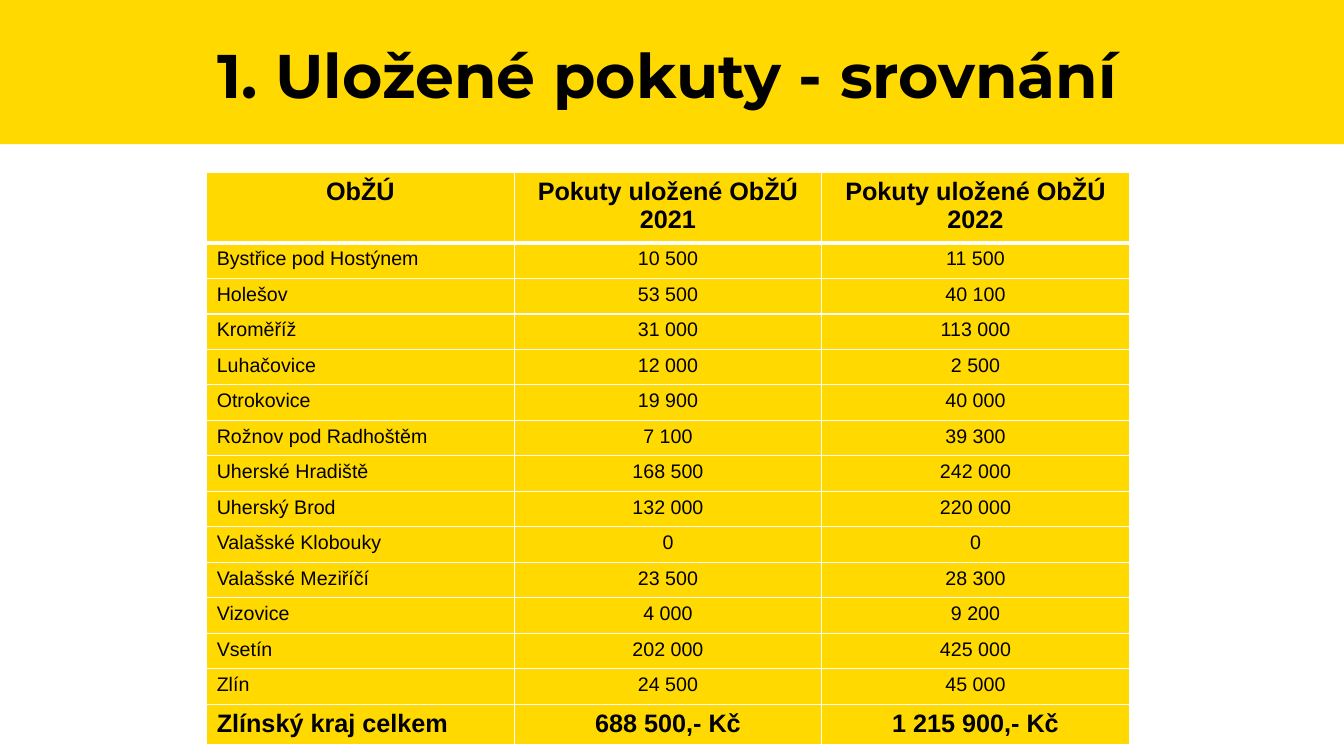
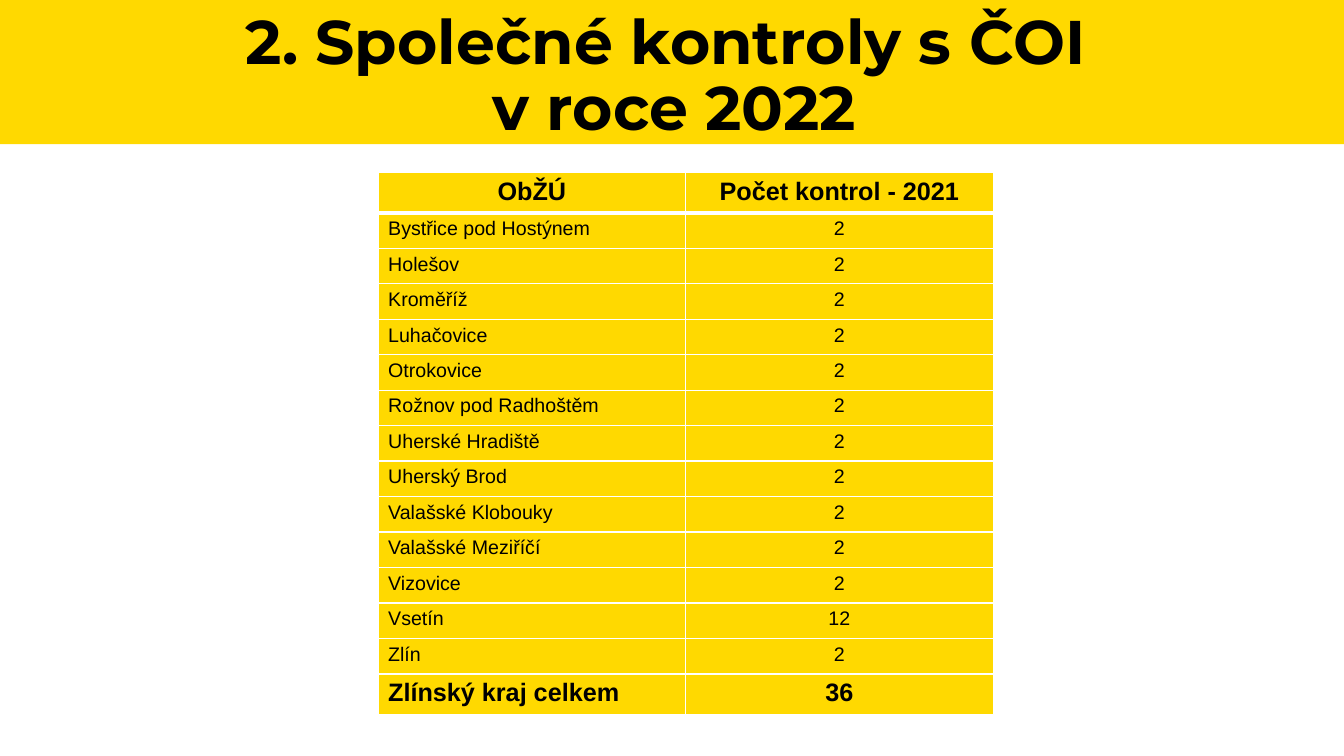
"""Build two slides comparing fines and inspections by trade office."""
import pptx
import pptx.dml.color
import pptx.enum.shapes
import pptx.enum.text
import pptx.oxml
import pptx.oxml.ns
import pptx.util

Inches = pptx.util.Inches
Pt = pptx.util.Pt
ALIGN = pptx.enum.text.PP_ALIGN

TOWNS = [
    "Bystřice pod Hostýnem", "Holešov", "Kroměříž", "Luhačovice", "Otrokovice",
    "Rožnov pod Radhoštěm", "Uherské Hradiště", "Uherský Brod",
    "Valašské Klobouky", "Valašské Meziříčí", "Vizovice", "Vsetín", "Zlín",
]
LABELS = ["ObŽÚ", *TOWNS, "Zlínský kraj celkem"]

SLIDES = [
    {
        "title": "1. Uložené pokuty - srovnání",
        "box": (0.46, 0.4, 12.32, 1.02),
        "left": 2.05,
        "head": 0.66,
        "data": [
            ["Pokuty uložené ObŽÚ 2021", "10 500", "53 500", "31 000", "12 000",
             "19 900", "7 100", "168 500", "132 000", "0", "23 500", "4 000",
             "202 000", "24 500", "688 500,- Kč"],
            ["Pokuty uložené ObŽÚ 2022", "11 500", "40 100", "113 000", "2 500",
             "40 000", "39 300", "242 000", "220 000", "0", "28 300", "9 200",
             "425 000", "45 000", "1 215 900,- Kč"],
        ],
    },
    {
        "title": "2. Společné kontroly s ČOI \vv roce 2022",
        "box": (0.26, 0.06, 12.86, 1.02),
        "left": 3.75,
        "head": 0.38,
        "data": [
            ["Počet kontrol - 2021", "2", "2", "2", "2", "2", "2", "2", "2",
             "2", "2", "2", "12", "2", "36"],
        ],
    },
]

COLORS = {"band": "FFD900", "text": "000000", "line": "FFFFFF"}
WIDE, HIGH = 13.33, 7.5
BAND = 1.43
TOP, COL, BODY, FOOT = 1.71, 3.05, 4.58, 0.38


def paint(fill, name):
    fill.solid()
    fill.fore_color.rgb = pptx.dml.color.RGBColor.from_string(COLORS[name])


def style(para, face, size, bold, align):
    para.alignment = align
    font = para.font
    font.name, font.size, font.bold = face, Pt(size), bold
    font.color.rgb = pptx.dml.color.RGBColor.from_string(COLORS["text"])


def edge(cell, side, width):
    cell._tc.get_or_add_tcPr().append(pptx.oxml.parse_xml(
        f'<a:ln{side} {pptx.oxml.ns.nsdecls("a")} w="{Pt(width)}">'
        f'<a:solidFill><a:srgbClr val="{COLORS["line"]}"/></a:solidFill>'
        f'</a:ln{side}>'))


def add_band(slide):
    band = slide.shapes.add_shape(
        pptx.enum.shapes.MSO_SHAPE.RECTANGLE, 0, 0, Inches(WIDE), Inches(BAND))
    band.shadow.inherit = False
    paint(band.fill, "band")
    band.line.fill.background()


def add_title(slide, text, box):
    frame = slide.shapes.add_textbox(*map(Inches, box)).text_frame
    frame.word_wrap = True
    para = frame.paragraphs[0]
    para.text = text
    para.line_spacing = 0.9
    style(para, "Montserrat", 44, True, ALIGN.CENTER)


def add_grid(slide, left, head, data):
    cols = [LABELS, *data]
    last = len(LABELS) - 1
    table = slide.shapes.add_table(
        len(LABELS), len(cols), Inches(left), Inches(TOP),
        Inches(COL * len(cols)), Inches(head + BODY + FOOT)).table
    table.horz_banding = False
    for col in table.columns:
        col.width = Inches(COL)
    highs = [head, *[BODY / len(TOWNS)] * len(TOWNS), FOOT]
    for row, high in zip(table.rows, highs):
        row.height = Inches(high)
    for c, texts in enumerate(cols):
        for r, text in enumerate(texts):
            cell = table.cell(r, c)
            cell.text = text
            bold = r in (0, last)
            align = ALIGN.LEFT if c == 0 and r > 0 else ALIGN.CENTER
            style(cell.text_frame.paragraphs[0], "Arial",
                  18 if bold else 14, bold, align)
            for side in "LRTB":
                thick = (r, side) in ((0, "B"), (1, "T"))
                edge(cell, side, 3 if thick else 1)
            paint(cell.fill, "band")


def main():
    deck = pptx.Presentation()
    deck.slide_width, deck.slide_height = Inches(WIDE), Inches(HIGH)
    for page in SLIDES:
        slide = deck.slides.add_slide(deck.slide_layouts[6])
        add_band(slide)
        add_title(slide, page["title"], page["box"])
        add_grid(slide, page["left"], page["head"], page["data"])
    deck.save("out.pptx")


if __name__ == "__main__":
    main()
